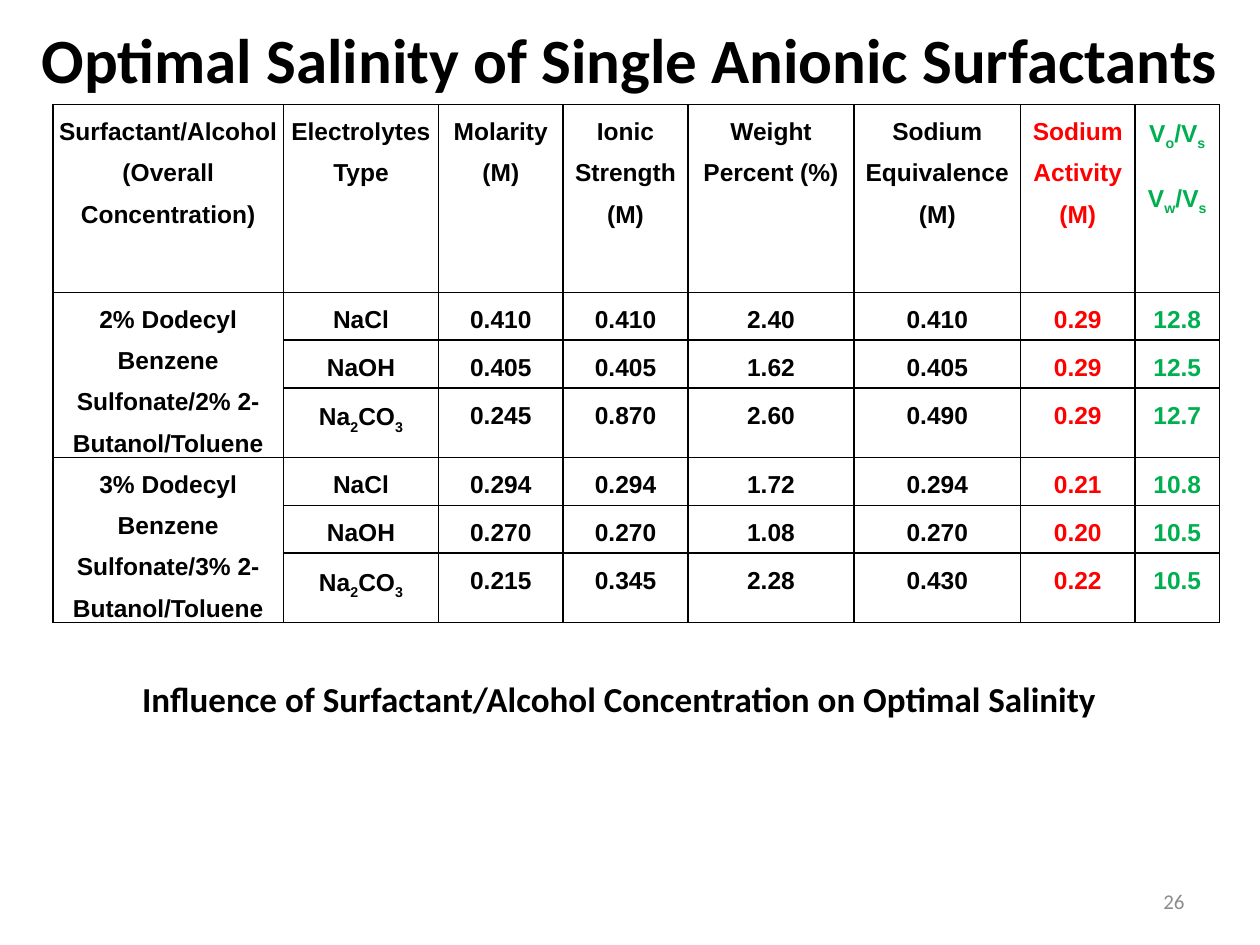
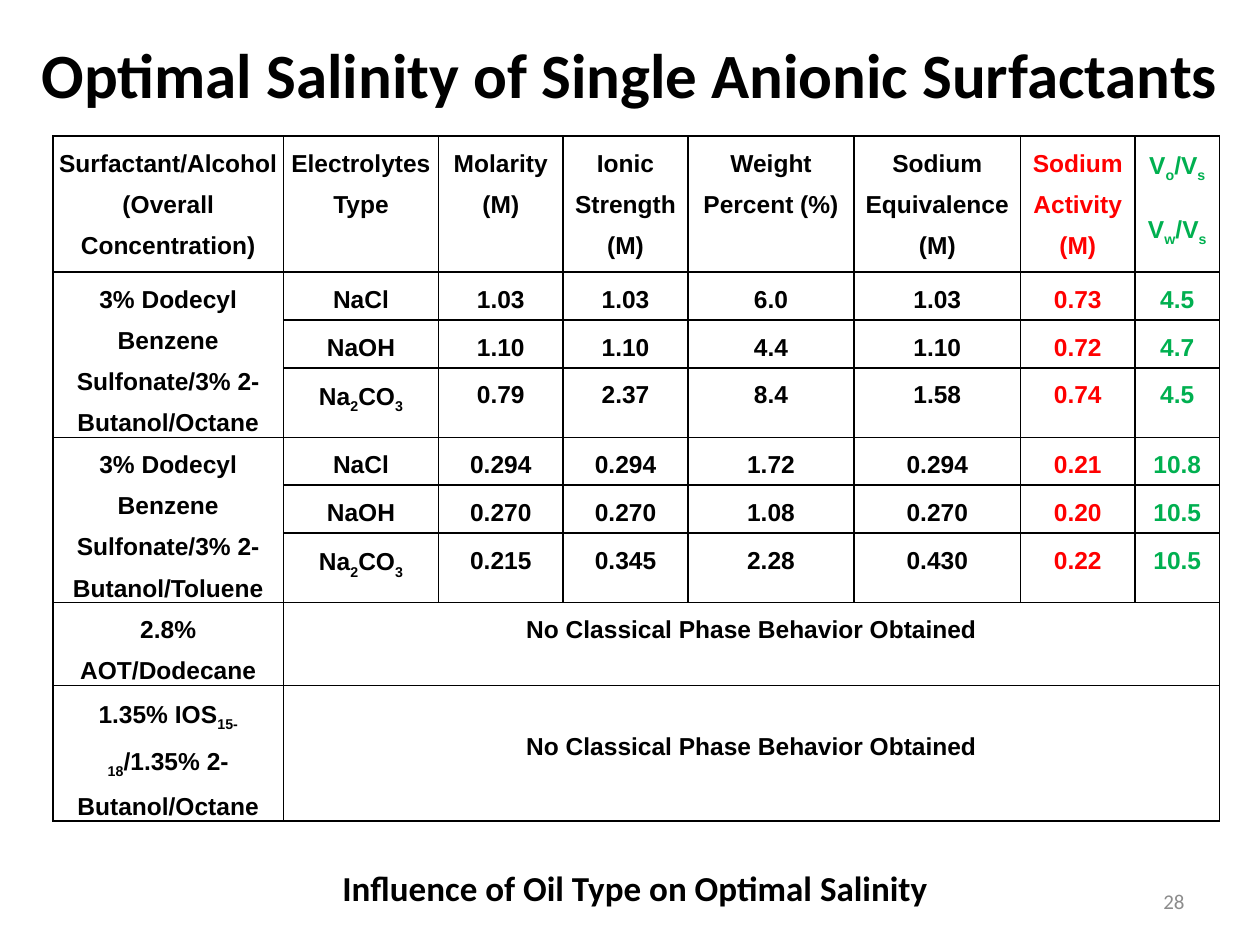
from pptx import Presentation
from pptx.dml.color import RGBColor as RGB
from pptx.enum.text import MSO_ANCHOR as Anchor, MSO_AUTO_SIZE as Fit, PP_ALIGN as Align
from pptx.oxml import parse_xml
from pptx.oxml.ns import nsdecls
from pptx.util import Inches, Pt

BLACK = RGB(0, 0, 0)
RED = RGB(0xFF, 0, 0)
GREEN = RGB(0, 0xB0, 0x50)
GRAY = RGB(0x8C, 0x8C, 0x8C)

TITLE = "Optimal Salinity of Single Anionic Surfactants"
HEADS = [
    "Surfactant/Alcohol (Overall Concentration)", "Electrolytes Type",
    "Molarity (M)", "Ionic Strength (M)", "Weight Percent (%)",
    "Sodium Equivalence (M)", "Sodium Activity (M)", "V~o~/V~s~\nV~w~/V~s~",
]
WIDTHS = [1.83, 1.23, 0.99, 0.99, 1.32, 1.32, 0.91, 0.67]
INKS = [BLACK] * 6 + [RED, GREEN]
SALTS = ["NaCl", "NaOH", "Na~2~CO~3~"]
TRIO = [0.38, 0.38, 0.55]
NONE = "No Classical Phase Behavior Obtained"

TWO_TOL = ("2% Dodecyl Benzene Sulfonate/2% 2-Butanol/Toluene", [
    ["0.410", "0.410", "2.40", "0.410", "0.29", "12.8"],
    ["0.405", "0.405", "1.62", "0.405", "0.29", "12.5"],
    ["0.245", "0.870", "2.60", "0.490", "0.29", "12.7"],
])
THREE_TOL = ("3% Dodecyl Benzene Sulfonate/3% 2-Butanol/Toluene", [
    ["0.294", "0.294", "1.72", "0.294", "0.21", "10.8"],
    ["0.270", "0.270", "1.08", "0.270", "0.20", "10.5"],
    ["0.215", "0.345", "2.28", "0.430", "0.22", "10.5"],
])
THREE_OCT = ("3% Dodecyl Benzene Sulfonate/3% 2-Butanol/Octane", [
    ["1.03", "1.03", "6.0", "1.03", "0.73", "4.5"],
    ["1.10", "1.10", "4.4", "1.10", "0.72", "4.7"],
    ["0.79", "2.37", "8.4", "1.58", "0.74", "4.5"],
])
FAILS = [("2.8% AOT/Dodecane", 0.66, 0),
         ("1.35% IOS~15-18~/1.35% 2-Butanol/Octane", 1.07, 0.27)]


def write(frame, text, size=14, font="Arial", color=BLACK, bold=True,
          align=Align.CENTER, line=None, after=None):
    """Fill a text frame; tildes enclose subscripts, newlines split paragraphs."""
    frame.word_wrap = True
    for i, part in enumerate(text.split("\n")):
        para = frame.add_paragraph() if i else frame.paragraphs[0]
        para.alignment = align
        if line:
            para.line_spacing = line
        if after:
            para.space_after = Pt(after)
        for j, piece in enumerate(part.split("~")):
            if not piece:
                continue
            run = para.add_run()
            run.text = piece
            run.font.size, run.font.name = Pt(size), font
            run.font.bold, run.font.color.rgb = bold, color
            if j % 2:
                run._r.get_or_add_rPr().set("baseline", "-25000")


def add_text(slide, text, box, anchor=Anchor.TOP, **style):
    """Place a Calibri text box."""
    frame = slide.shapes.add_textbox(*map(Inches, box)).text_frame
    frame.vertical_anchor = anchor
    write(frame, text, font="Calibri", **style)


def add_title(slide, height):
    """Format the title across the top of the slide."""
    shape = slide.shapes.title
    shape.left, shape.top = 0, 0
    shape.width, shape.height = Inches(10), Inches(height)
    frame = shape.text_frame
    frame.auto_size, frame.vertical_anchor = Fit.NONE, Anchor.MIDDLE
    write(frame, TITLE, size=36, font="Calibri")


def rule(cell):
    """Give a cell thin black borders and no fill."""
    props = cell._tc.get_or_add_tcPr()
    for side in "LRTB":
        props.append(parse_xml(
            f'<a:ln{side} {nsdecls("a")} w="12700"><a:solidFill>'
            f'<a:srgbClr val="{BLACK}"/></a:solidFill></a:ln{side}>'))
    cell.fill.background()


def put(cell, text, color=BLACK, drop=0):
    """Write one table cell, lowered by drop."""
    cell.margin_left = cell.margin_right = Inches(0.04)
    cell.margin_top, cell.margin_bottom = Inches(drop), 0
    write(cell.text_frame, text, color=color, line=1.5, after=10)


def add_grid(slide, top, head, groups, fails=()):
    """Build the salinity table from salt groups and failed systems."""
    highs = [head] + TRIO * len(groups) + [high for _, high, _ in fails]
    table = slide.shapes.add_table(
        len(highs), len(WIDTHS), Inches(0.42), Inches(top),
        Inches(sum(WIDTHS)), Inches(sum(highs))).table
    table.first_row = table.horz_banding = False
    for col, wide in zip(table.columns, WIDTHS):
        col.width = Inches(wide)
    for row, high in zip(table.rows, highs):
        row.height = Inches(high)
    for cell in table.iter_cells():
        rule(cell)
    for col, (text, ink) in enumerate(zip(HEADS, INKS)):
        put(table.cell(0, col), text, ink)
    row = 1
    for name, lines in groups:
        table.cell(row, 0).merge(table.cell(row + 2, 0))
        put(table.cell(row, 0), name)
        for salt, values in zip(SALTS, lines):
            for col, text in enumerate([salt] + values, 1):
                put(table.cell(row, col), text, INKS[col])
            row += 1
    for row, (name, _, drop) in enumerate(fails, row):
        put(table.cell(row, 0), name)
        table.cell(row, 1).merge(table.cell(row, len(WIDTHS) - 1))
        put(table.cell(row, 1), NONE, drop=drop)


def add_page(deck, number, high, grid, note, box):
    """Add a slide with title, table, caption and page number."""
    slide = deck.slides.add_slide(deck.slide_layouts[5])
    add_title(slide, high)
    add_grid(slide, *grid)
    add_text(slide, note, box, size=20)
    add_text(slide, number, (7.17, 6.95, 2.33, 0.4), Anchor.MIDDLE,
             size=12, color=GRAY, bold=False, align=Align.RIGHT)


def main():
    """Build and save the deck."""
    deck = Presentation()
    deck.slide_width, deck.slide_height = Inches(10), Inches(7.5)
    add_page(deck, "26", 0.92, (0.83, 1.49, [TWO_TOL, THREE_TOL]),
             "Influence of Surfactant/Alcohol Concentration on Optimal Salinity",
             (1, 5.33, 7.83, 0.44))
    add_page(deck, "28", 1.17, (1.08, 1.08, [THREE_OCT, THREE_TOL], FAILS),
             "Influence of Oil Type on Optimal Salinity",
             (2.25, 6.83, 5.58, 0.44))
    deck.save("out.pptx")


if __name__ == "__main__":
    main()
